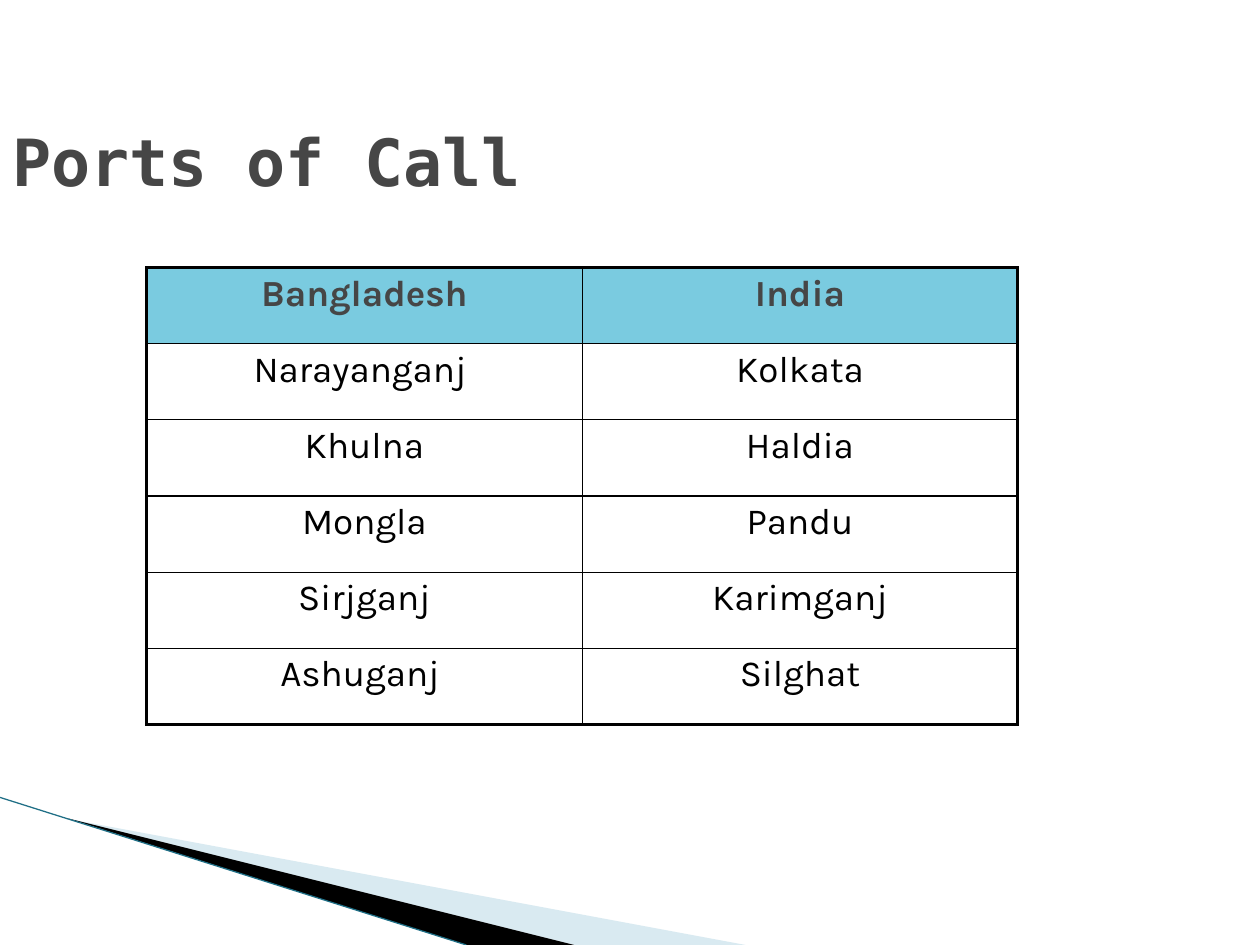
from collections import namedtuple

from lxml import etree
from pptx import Presentation
from pptx.dml.color import RGBColor
from pptx.enum.shapes import MSO_CONNECTOR
from pptx.enum.text import MSO_ANCHOR, PP_ALIGN
from pptx.oxml.ns import qn
from pptx.util import Inches, Pt

TOP = MSO_ANCHOR.TOP
LEFT, CENTER = PP_ALIGN.LEFT, PP_ALIGN.CENTER
STRAIGHT = MSO_CONNECTOR.STRAIGHT
TITLE_ONLY = 5
BLACK, GRAY, HEADER_BLUE = "000000", "464646", "7ACBE0"
PALE_BLUE, TEAL = "A0CBDC", "1F6F86"
THIN, THICK = 1, 2.25

Box = namedtuple("Box", "left top width height")

PORTS = [
    ("Bangladesh", "India"),
    ("Narayanganj ", "Kolkata"),
    ("Khulna", "Haldia"),
    ("Mongla", "Pandu"),
    ("Sirjganj", "Karimganj"),
    ("Ashuganj ", "Silghat"),
]


def color(hex_text):
    """Return the colour for a hex string."""
    return RGBColor.from_string(hex_text)


def style_text(paragraph, name, size, hex_text, bold, alignment):
    """Format a paragraph and its runs."""
    paragraph.alignment = alignment
    for span in paragraph.runs:
        span.font.name = name
        span.font.size = Pt(size)
        span.font.bold = bold
        span.font.color.rgb = color(hex_text)


def add_wedge(page, box, points, hex_text, opacity=100):
    """Draw a filled outline from points relative to the box."""
    corners = [(Inches(box.left + x), Inches(box.top + y)) for x, y in points]
    builder = page.shapes.build_freeform(*corners[0])
    builder.add_line_segments(corners[1:])
    wedge = builder.convert_to_shape()
    wedge.shadow.inherit = False
    wedge.line.fill.background()
    wedge.fill.solid()
    wedge.fill.fore_color.rgb = color(hex_text)
    if opacity < 100:
        tint = wedge.fill._xPr.find(".//" + qn("a:srgbClr"))
        etree.SubElement(tint, qn("a:alpha"), val=str(opacity * 1000))


def add_swoosh(page, box):
    """Draw the two wedges and the thin line in the lower corner."""
    add_wedge(page, box, [(0.73, 0.23), (box.width, box.height), (6.07, box.height)], PALE_BLUE, 40)
    add_wedge(page, box, [(0.71, 0.22), (6.07, box.height), (4.93, box.height)], BLACK)
    edge = page.shapes.add_connector(
        STRAIGHT, Inches(box.left), Inches(box.top),
        Inches(box.left + 4.93), Inches(box.top + box.height))
    edge.line.color.rgb = color(TEAL)
    edge.line.width = Pt(0.95)
    etree.SubElement(edge._element.spPr, qn("a:effectLst"))


def add_title(page, box):
    """Place and format the title."""
    title = page.shapes.title
    title.left, title.top, title.width, title.height = map(Inches, box)
    frame = title.text_frame
    frame.text = "Ports of Call"
    frame.word_wrap = True
    frame.vertical_anchor = TOP
    frame.margin_left = frame.margin_right = Inches(0.13)
    frame.margin_top = Inches(0.03)
    style_text(frame.paragraphs[0], "DejaVu Sans Mono", 49.5, GRAY, True, LEFT)


def set_borders(cell, widths):
    """Give a cell black borders, with widths for left, right, top and bottom."""
    properties = cell._tc.get_or_add_tcPr()
    for position, (side, width) in enumerate(zip("LRTB", widths)):
        border = etree.Element(qn(f"a:ln{side}"), w=str(Pt(width)))
        fill = etree.SubElement(border, qn("a:solidFill"))
        etree.SubElement(fill, qn("a:srgbClr"), val=BLACK)
        properties.insert(position, border)


def add_ports_table(page, box):
    """Fill the table of ports with a coloured header and a thick frame."""
    last_row, last_column = len(PORTS) - 1, len(PORTS[0]) - 1
    table = page.shapes.add_table(len(PORTS), len(PORTS[0]), *map(Inches, box)).table
    table.first_row = table.horz_banding = False
    for row, names in enumerate(PORTS):
        header = row == 0
        for column, name in enumerate(names):
            cell = table.cell(row, column)
            cell.text_frame.text = name
            style_text(cell.text_frame.paragraphs[0], "Karla", 28,
                       GRAY if header else BLACK, header, CENTER)
            if header:
                cell.fill.solid()
                cell.fill.fore_color.rgb = color(HEADER_BLUE)
            else:
                cell.fill.background()
            outer = (column == 0, column == last_column, header, row == last_row)
            set_borders(cell, [THICK if side else THIN for side in outer])


def main():
    """Build the slide and save it."""
    deck = Presentation()
    deck.slide_width, deck.slide_height = Inches(13.32), Inches(9.99)
    page = deck.slides.add_slide(deck.slide_layouts[TITLE_ONLY])
    add_swoosh(page, Box(0, 8.43, 7.88, 1.56))
    add_title(page, Box(0, 1.25, 11.99, 1.66))
    add_ports_table(page, Box(1.55, 2.83, 9.21, 4.83))
    deck.save("out.pptx")


if __name__ == "__main__":
    main()
